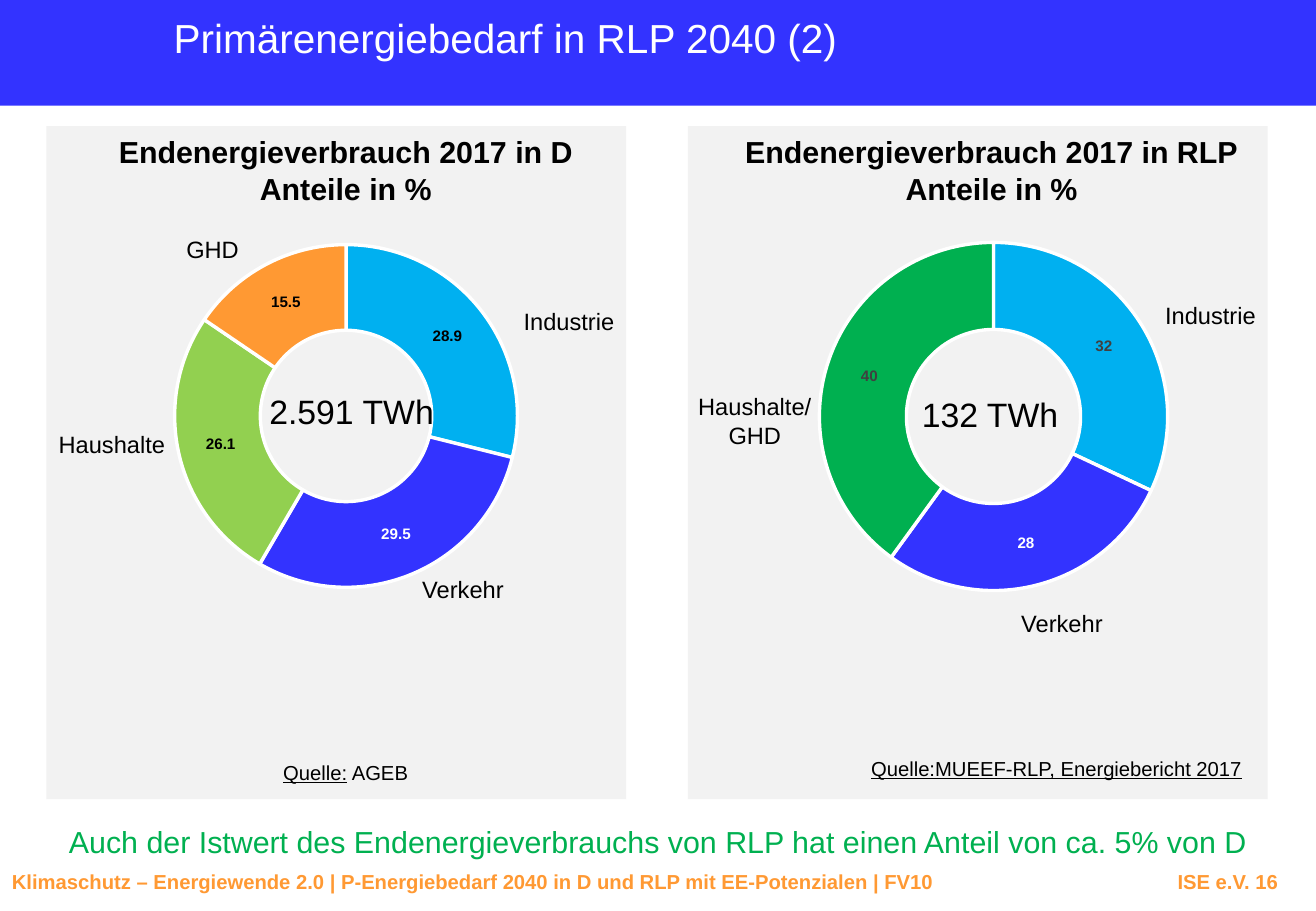
"""Build the slide on final energy use in Germany and Rhineland-Palatinate."""
import lxml.etree
import pptx
import pptx.chart.data
import pptx.dml.color
import pptx.enum.chart
import pptx.enum.shapes
import pptx.enum.text
import pptx.oxml
import pptx.oxml.ns
import pptx.util

Cm, Pt, qn = pptx.util.Cm, pptx.util.Pt, pptx.oxml.ns.qn
LEFT, CENTER = pptx.enum.text.PP_ALIGN.LEFT, pptx.enum.text.PP_ALIGN.CENTER
BLACK, WHITE, GREY, DARK = "000000", "FFFFFF", "F2F2F2", "404040"
SKY, BLUE, LIME, ORANGE, GREEN = "00B0F0", "3333FF", "92D050", "FF9933", "00B050"


def color(value):
    return pptx.dml.color.RGBColor.from_string(value)


class EnergySlide:
    """Holds the font and the slide, and adds each kind of element."""

    font = "Arial"

    def __init__(self, slide):
        self.slide = slide

    def style(self, font, size, fill, bold=False):
        font.name, font.size, font.bold = self.font, Pt(size), bold
        font.color.rgb = color(fill)

    def panel(self, left, top, width, height, fill):
        area = self.slide.shapes.add_shape(
            pptx.enum.shapes.MSO_SHAPE.RECTANGLE, Cm(left), Cm(top), Cm(width), Cm(height))
        area.shadow.inherit = False
        area.fill.solid()
        area.fill.fore_color.rgb = color(fill)
        area.line.fill.background()

    def text(self, box, words, size, fill=BLACK, bold=False, align=LEFT, wrap=False, inset=None):
        frame = self.slide.shapes.add_textbox(*map(Cm, box)).text_frame
        frame.word_wrap = wrap
        if inset is not None:
            frame.margin_left = frame.margin_right = Cm(inset)
            frame.margin_top = frame.margin_bottom = Cm(inset)
        frame.text = words
        for paragraph in frame.paragraphs:
            paragraph.alignment = align
            for run in paragraph.runs:
                self.style(run.font, size, fill, bold)
        return frame

    def source(self, box, underlined, plain=""):
        paragraph = self.text(box, underlined, 12, inset=0).paragraphs[0]
        paragraph.runs[0].font.underline = True
        if plain:
            rest = paragraph.add_run()
            rest.text = plain
            self.style(rest.font, 12, BLACK)

    def footer(self, box, words, tab):
        paragraph = self.text(box, words, 12, ORANGE, True, wrap=True).paragraphs[0]
        properties = paragraph._p.get_or_add_pPr()
        stops = lxml.etree.SubElement(properties, qn("a:tabLst"))
        lxml.etree.SubElement(stops, qn("a:tab"), pos=str(Cm(tab)), algn="r")

    def doughnut(self, box, shares, colors, plot_area, label_color, number_format):
        data = pptx.chart.data.CategoryChartData()
        data.categories = [str(number) for number in range(1, len(shares) + 1)]
        data.add_series("Series 1", shares)
        chart = self.slide.shapes.add_chart(
            pptx.enum.chart.XL_CHART_TYPE.DOUGHNUT, *map(Cm, box), data).chart
        chart.has_legend = chart.has_title = False
        self.style(chart.font, 10, BLACK)
        plot = chart.plots[0]
        plot.vary_by_categories = True
        plot._element.find(qn("c:holeSize")).set("val", "75")
        series = plot.series[0]
        labels = series.data_labels
        labels.show_value, labels.show_percentage = True, False
        labels.number_format, labels.number_format_is_linked = number_format, False
        self.style(labels.font, 9, label_color, True)
        for index, fill in enumerate(colors):
            point = series.points[index]
            point.format.fill.solid()
            point.format.fill.fore_color.rgb = color(fill)
            point.format.line.color.rgb = color(WHITE)
            point.format.line.width = Pt(2)
            if fill == BLUE:
                self.style(point.data_label.font, 9, WHITE, True)
        self.place_plot(chart, plot_area)

    def place_plot(self, chart, plot_area):
        area = chart._chartSpace.chart.plotArea
        for layout in area.findall(qn("c:layout")):
            area.remove(layout)
        layout = lxml.etree.Element(qn("c:layout"))
        manual = lxml.etree.SubElement(layout, qn("c:manualLayout"))
        settings = [("layoutTarget", "inner"), ("xMode", "edge"), ("yMode", "edge")]
        for tag, value in settings + list(zip("xywh", plot_area)):
            lxml.etree.SubElement(manual, qn(f"c:{tag}"), val=str(value))
        area.insert(0, layout)
        clear = lxml.etree.Element(qn("c:spPr"))
        for parent in (clear, lxml.etree.SubElement(clear, qn("a:ln"))):
            parent.insert(0, lxml.etree.Element(qn("a:noFill")))
        chart._chartSpace.chart.addnext(clear)


REGIONS = [
    dict(left=0.97,
         heading=((2.01, 2.67, 10.44, 1.8), "Endenergieverbrauch 2017 in D\nAnteile in %"),
         source=((5.92, 15.9, 2.67, 0.51), "Quelle:", " AGEB"),
         doughnut=((2.64, 4.78, 9.19, 7.92), (28.9, 29.5, 26.1, 15.5),
                   (SKY, BLUE, LIME, ORANGE), (0.11, 0.04, 0.78, 0.91), BLACK, "0.0"),
         sectors=[((10.69, 6.3, 2.41, 0.86), "Industrie"),
                  ((8.56, 11.89, 2.24, 0.86), "Verkehr"),
                  ((3.63, 4.78, 1.63, 0.86), "GHD"),
                  ((0.97, 8.86, 2.74, 0.86), "Haushalte")],
         total=((5.38, 8.05, 3.99, 1.12), "2.591 TWh")),
    dict(left=14.38,
         heading=((15.27, 2.67, 10.92, 1.8), "Endenergieverbrauch 2017 in RLP\nAnteile in %"),
         source=((18.21, 15.82, 7.92, 0.51), "Quelle:MUEEF-RLP, Energiebericht 2017"),
         doughnut=((16.23, 4.83, 8.99, 7.92), (32, 28, 40),
                   (SKY, BLUE, GREEN), (0.1, 0.03, 0.81, 0.92), DARK, "General"),
         sectors=[((24.1, 6.17, 2.41, 0.86), "Industrie"),
                  ((21.08, 12.6, 2.24, 0.86), "Verkehr"),
                  ((14.33, 8.08, 2.9, 1.45), "Haushalte/\vGHD")],
         total=((19.02, 8.1, 3.38, 1.12), "132 TWh")),
]


def main():
    deck = pptx.Presentation()
    deck.slide_width, deck.slide_height = Cm(27.51), Cm(19.05)
    page = EnergySlide(deck.slides.add_slide(deck.slide_layouts[6]))
    page.panel(0, 0, 27.51, 2.21, BLUE)
    page.footer((0, 18.06, 27.51, 0.95),
                "Klimaschutz – Energiewende 2.0 | P-Energiebedarf 2040 in D und RLP "
                "mit EE-Potenzialen | FV10\tISE e.V. 16", 26.47)
    page.text((3.63, 0.28, 14.02, 1.02), "Primärenergiebedarf in RLP 2040 (2)", 24, WHITE, inset=0)
    for region in REGIONS:
        page.panel(region["left"], 2.64, 12.12, 14.07, GREY)
        page.source(*region["source"])
        page.doughnut(*region["doughnut"])
        for box, sector in region["sectors"]:
            page.text(box, sector, 14, align=CENTER)
        page.text(*region["heading"], 18, bold=True, align=CENTER)
        page.text(*region["total"], 20)
    page.text((0.79, 17.04, 25.93, 1.12),
              "Auch der Istwert des Endenergieverbrauchs von RLP hat einen Anteil von ca. 5% von D",
              18, GREEN, align=CENTER, wrap=True, inset=0.18)
    deck.save("out.pptx")


if __name__ == "__main__":
    main()
